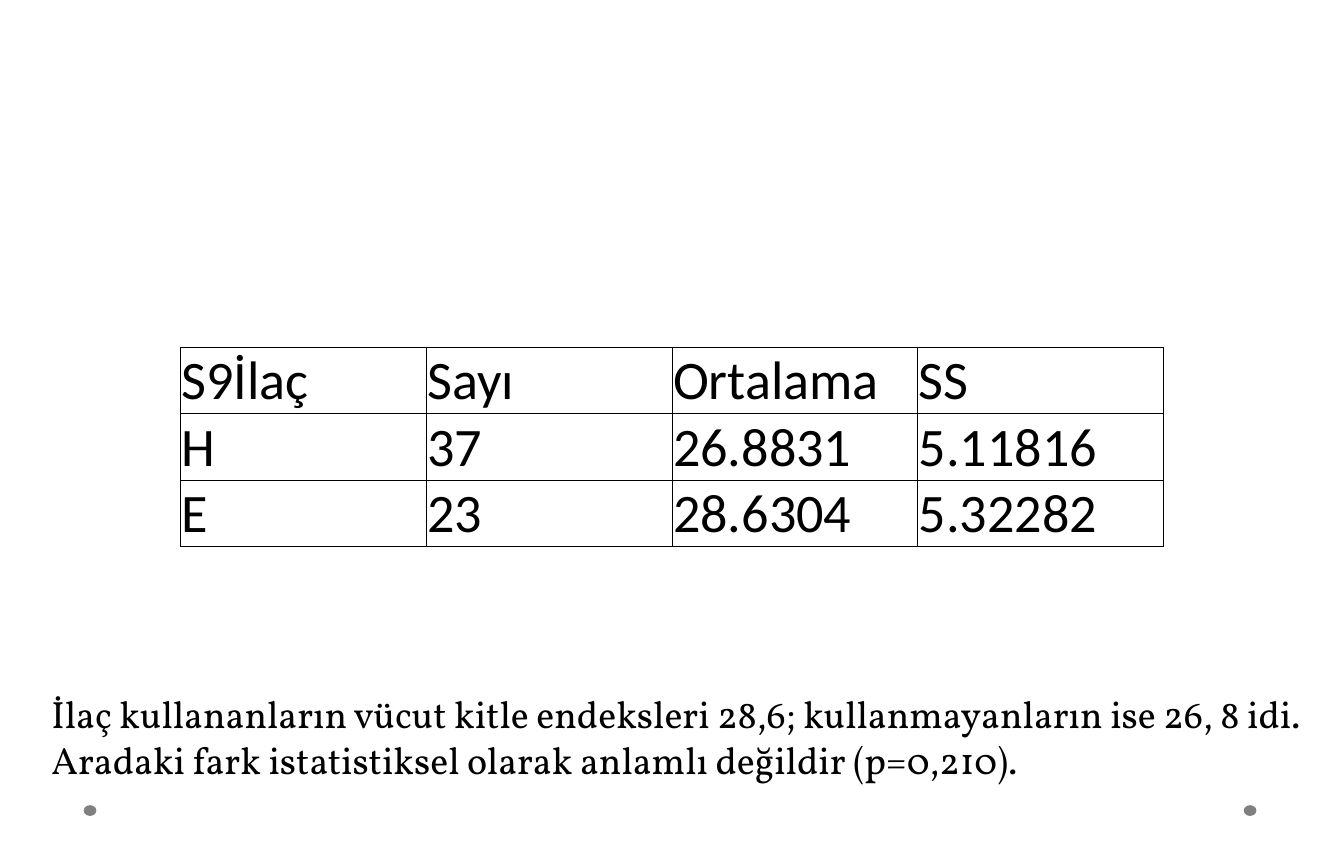
from dataclasses import dataclass

from lxml import etree
from pptx import Presentation
from pptx.dml.color import RGBColor
from pptx.enum.shapes import MSO_SHAPE
from pptx.enum.text import MSO_ANCHOR
from pptx.oxml.ns import qn
from pptx.util import Cm, Pt

OVAL = MSO_SHAPE.OVAL
BOTTOM = MSO_ANCHOR.BOTTOM


@dataclass(frozen=True)
class Theme:
    ink: str = "000000"
    dot: str = "808080"
    table_font: str = "Calibri"
    table_size: int = 40
    finding_font: str = "Vollkorn"
    finding_size: int = 28
    border: float = 0.5


class SlideBuilder:
    def __init__(self, slide, theme):
        self.shapes = slide.shapes
        self.theme = theme

    def add_text(self, paragraph, text, font, size):
        run = paragraph.add_run()
        run.text = text
        run.font.name = font
        run.font.size = Pt(size)
        run.font.color.rgb = RGBColor.from_string(self.theme.ink)

    def dot(self, left, top, width, height):
        dot = self.shapes.add_shape(OVAL, Cm(left), Cm(top), Cm(width), Cm(height))
        dot.shadow.inherit = False
        dot.fill.solid()
        dot.fill.fore_color.rgb = RGBColor.from_string(self.theme.dot)
        dot.line.fill.background()

    def finding(self, text, left, top, width, height):
        frame = self.shapes.add_textbox(Cm(left), Cm(top), Cm(width), Cm(height)).text_frame
        frame.word_wrap = True
        self.add_text(frame.paragraphs[0], text, self.theme.finding_font, self.theme.finding_size)

    def border(self, cell):
        properties = cell._tc.get_or_add_tcPr()
        for index, side in enumerate(("a:lnL", "a:lnR", "a:lnT", "a:lnB")):
            line = etree.Element(qn(side), w=str(Pt(self.theme.border)))
            fill = etree.SubElement(line, qn("a:solidFill"))
            etree.SubElement(fill, qn("a:srgbClr"), val=self.theme.ink)
            properties.insert(index, line)

    def table(self, rows, left, top, column_width, row_height):
        columns = len(rows[0])
        table = self.shapes.add_table(
            len(rows), columns, Cm(left), Cm(top),
            Cm(column_width * columns), Cm(row_height * len(rows)),
        ).table
        table.first_row = False
        table.horz_banding = False
        for column in table.columns:
            column.width = Cm(column_width)
        for row, values in zip(table.rows, rows):
            row.height = Cm(row_height)
            for cell, value in zip(row.cells, values):
                cell.fill.background()
                cell.vertical_anchor = BOTTOM
                cell.margin_left = cell.margin_right = cell.margin_top = Cm(0.03)
                cell.margin_bottom = 0
                self.border(cell)
                self.add_text(cell.text_frame.paragraphs[0], value,
                              self.theme.table_font, self.theme.table_size)


BMI_BY_MEDICATION = [
    ("S9İlaç", "Sayı", "Ortalama", "SS"),
    ("H", "37", "26.8831", "5.11816"),
    ("E", "23", "28.6304", "5.32282"),
]
FINDING = (
    "İlaç kullananların vücut kitle endeksleri 28,6; kullanmayanların ise 26, 8 idi. "
    "Aradaki fark istatistiksel olarak anlamlı değildir (p=0,210)."
)


def main():
    deck = Presentation()
    deck.slide_width = Cm(35)
    deck.slide_height = Cm(22.1)
    builder = SlideBuilder(deck.slides.add_slide(deck.slide_layouts[6]), Theme())
    for left in (32.39, 2.18):
        builder.dot(left, 20.96, 0.33, 0.28)
    builder.finding(FINDING, 1.09, 17.86, 33.91, 2.64)
    builder.table(BMI_BY_MEDICATION, 4.7, 9.04, 6.4, 1.73)
    deck.save("out.pptx")


if __name__ == "__main__":
    main()
